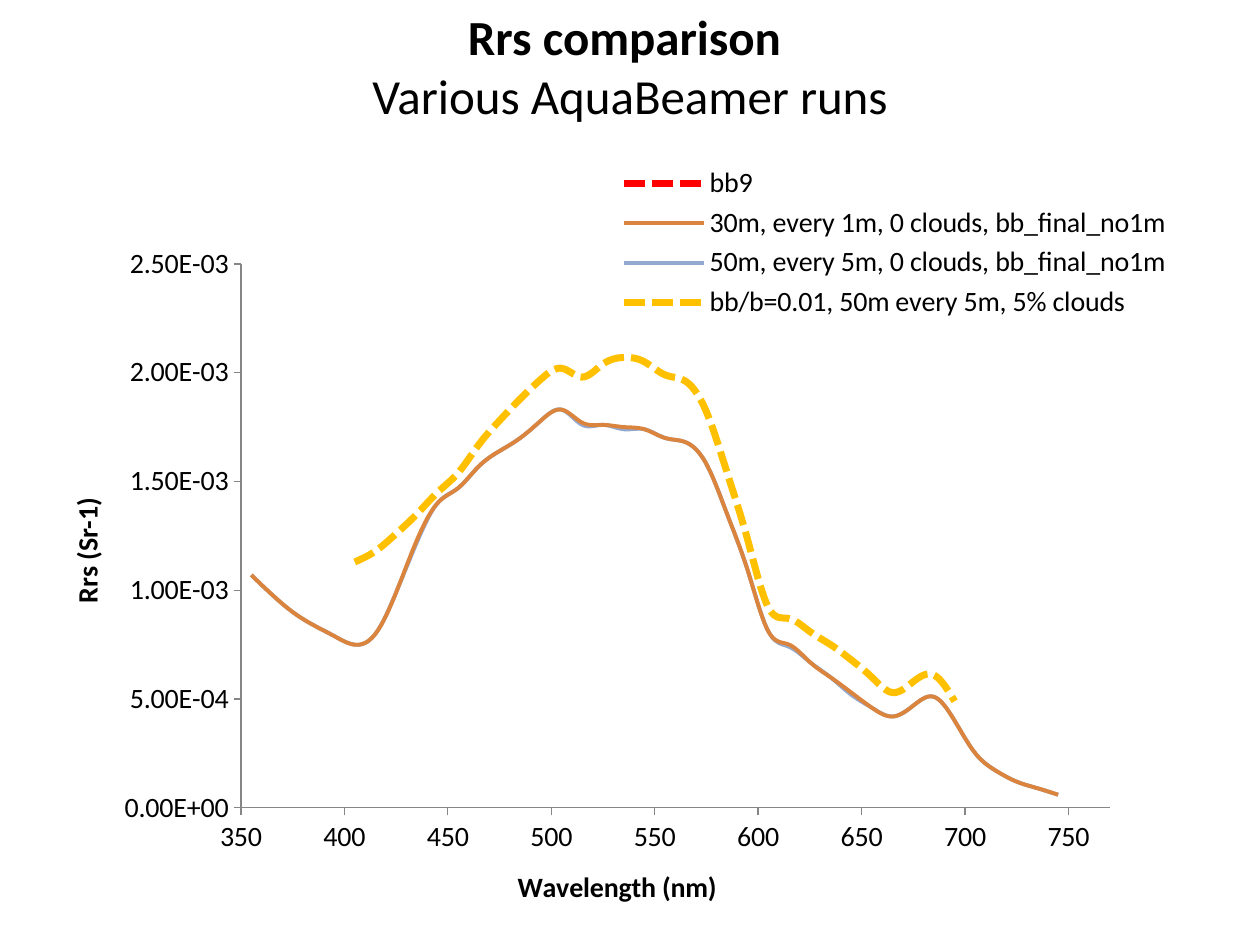
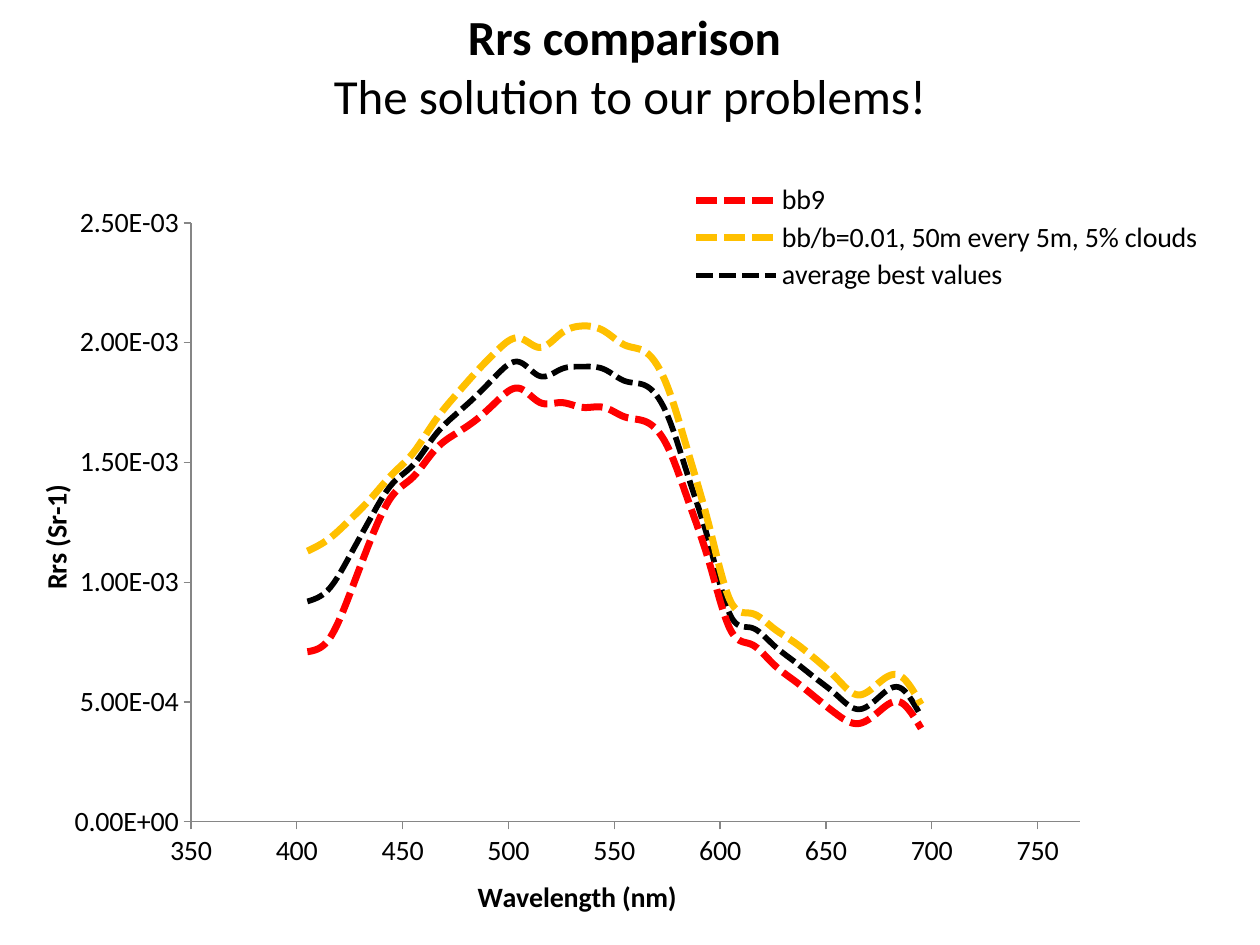
"""Build two slides that compare reflectance spectra in scatter charts."""
from lxml import etree
from pptx import Presentation
from pptx.chart.data import XyChartData
from pptx.dml.color import RGBColor
from pptx.enum.chart import XL_CHART_TYPE, XL_LEGEND_POSITION, XL_MARKER_STYLE, XL_TICK_MARK
from pptx.enum.dml import MSO_LINE
from pptx.enum.text import MSO_ANCHOR, MSO_AUTO_SIZE, PP_ALIGN
from pptx.oxml.ns import qn
from pptx.util import Emu, Pt

SMOOTH_LINES = XL_CHART_TYPE.XY_SCATTER_SMOOTH_NO_MARKERS
LEGEND_RIGHT = XL_LEGEND_POSITION.RIGHT
NO_MARKER = XL_MARKER_STYLE.NONE
TICK_OUT, TICK_NONE = XL_TICK_MARK.OUTSIDE, XL_TICK_MARK.NONE
DASHED = MSO_LINE.SQUARE_DOT
TOP, CENTER, FIXED = MSO_ANCHOR.TOP, PP_ALIGN.CENTER, MSO_AUTO_SIZE.NONE

FONT, BLACK, AXIS_GREY = "Calibri", "000000", "868686"
SLIDE_SIZE = (1260, 945)
TITLE_BOX = (0, 0, 1260, 131)
TITLE_ONLY = 5
WAVELENGTH_STEP = 10

# unit of every reading: 0.00001 per steradian
RUNS = {
    "bb9": dict(
        start=405, color="FF0000", width=4, dash=DASHED,
        readings=[71, 76, 95, 118, 136, 144, 155, 162, 168, 176, 181, 175, 175, 173, 173,
                  169, 167, 157, 134, 108, 80, 74, 66, 59, 52, 45, 41, 46, 50, 39]),
    "30m, every 1m, 0 clouds, bb_final_no1m": dict(
        start=355, color="DB843D", width=2.25, dash=None,
        readings=[107, 98, 90, 84, 79, 75, 80, 99, 123, 140, 147, 157, 164, 170, 178, 183,
                  177, 176, 175, 174, 170, 168, 158, 135, 109, 81, 75, 67, 60, 53, 46, 42,
                  47, 51, 40, 25, 17, 12, 9, 6]),
    "50m, every 5m, 0 clouds, bb_final_no1m": dict(
        start=355, color="93A9CF", width=2.25, dash=None,
        readings=[107, 98, 90, 84, 79, 75, 80, 99, 122, 140, 147, 157, 164, 170, 178, 183,
                  176, 176, 174, 174, 170, 168, 158, 135, 109, 81, 74, 67, 60, 52, 46, 42,
                  47, 51, 40, 25, 17, 12, 9, 6]),
    "bb/b=0.01, 50m every 5m, 5% clouds": dict(
        start=405, color="FFC000", width=4, dash=DASHED,
        readings=[113, 118, 126, 135, 145, 154, 167, 178, 188, 197, 202, 198, 204, 207, 205,
                  199, 196, 182, 154, 123, 92, 87, 81, 75, 68, 60, 53, 58, 61, 49]),
    "average best values": dict(
        start=405, color=BLACK, width=3.25, dash=DASHED,
        readings=[92, 97, 111, 127, 141, 149, 161, 170, 178, 187, 192, 186, 189, 190, 189,
                  184, 182, 170, 144, 116, 86, 81, 74, 67, 60, 53, 47, 52, 56, 44]),
}
BB9, RUN_30M, RUN_50M, RATIO, AVERAGE = RUNS

SLIDES = [
    dict(heading="Rrs comparison ", subtitle="Various AquaBeamer runs",
         runs=[BB9, RUN_30M, RUN_50M, RATIO],
         frame=(63, 158, 1140, 756), plot=(241, 264, 869, 544),
         legend=(615, 161, 560, 164)),
    dict(heading="Rrs comparison ", subtitle="The solution to our problems!",
         runs=[BB9, RATIO, AVERAGE],
         frame=(32, 136, 1197, 788), plot=(191, 223, 889, 599),
         legend=(687, 180, 520, 116)),
]
WAVELENGTH_AXIS = dict(minimum_scale=350, maximum_scale=770, major_unit=50)
RRS_AXIS = dict(minimum_scale=0, maximum_scale=0.0025, major_unit=0.0005)
AXIS_STYLE = dict(has_major_gridlines=False, has_minor_gridlines=False,
                  major_tick_mark=TICK_OUT, minor_tick_mark=TICK_NONE)


def px(length):
    """Turn pixels into EMU."""
    return Emu(round(length * 914400 / 126))


def rgb(code):
    """Turn a hex string into a colour."""
    return RGBColor.from_string(code)


def apply(target, values):
    """Set each named attribute on the target."""
    for name, value in values.items():
        setattr(target, name, value)


def style_font(font, size, bold=False):
    """Give a font the shared face and colour."""
    apply(font, dict(name=FONT, size=Pt(size), bold=bold))
    font.color.rgb = rgb(BLACK)


def layout_xml(box, frame, inner=False):
    """Describe a pixel box as fractions of the chart frame."""
    left, top, width, height = box
    frame_left, frame_top, frame_width, frame_height = frame
    layout = etree.Element(qn("c:layout"))
    manual = etree.SubElement(layout, qn("c:manualLayout"))
    settings = [("layoutTarget", "inner")] if inner else []
    settings += [("xMode", "edge"), ("yMode", "edge"),
                 ("x", (left - frame_left) / frame_width),
                 ("y", (top - frame_top) / frame_height),
                 ("w", width / frame_width), ("h", height / frame_height)]
    for tag, value in settings:
        etree.SubElement(manual, qn(f"c:{tag}")).set("val", str(value))
    return layout


def add_heading(slide, heading, subtitle):
    """Fill the title placeholder with a bold line and a plain line."""
    title = slide.shapes.title
    apply(title, dict(zip(("left", "top", "width", "height"), map(px, TITLE_BOX))))
    frame = title.text_frame
    apply(frame, dict(text=f"{heading}\n{subtitle}", word_wrap=True,
                      auto_size=FIXED, vertical_anchor=TOP))
    for paragraph, bold in zip(frame.paragraphs, (True, False)):
        paragraph.alignment = CENTER
        style_font(paragraph.runs[0].font, 28, bold)


def style_axis(axis, caption, scale, number_format):
    """Set the scale, ticks, labels and caption of an axis."""
    apply(axis, {**AXIS_STYLE, **scale})
    apply(axis.tick_labels, dict(number_format=number_format, number_format_is_linked=False))
    style_font(axis.tick_labels.font, 16)
    axis.format.line.color.rgb = rgb(AXIS_GREY)
    axis.format.line.width = Pt(0.75)
    axis.axis_title.text_frame.text = caption
    style_font(axis.axis_title.text_frame.paragraphs[0].runs[0].font, 16, True)


def style_run(series):
    """Draw one run as a smooth line in its own colour."""
    run = RUNS[series.name]
    apply(series.format.line, dict(width=Pt(run["width"]), dash_style=run["dash"]))
    series.format.line.color.rgb = rgb(run["color"])
    series.marker.style = NO_MARKER
    series._element.get_or_add_smooth().val = True


def add_spectra(slide, runs, frame, plot, legend):
    """Chart the runs against wavelength."""
    spectra = XyChartData()
    for name in runs:
        points = spectra.add_series(name)
        for step, reading in enumerate(RUNS[name]["readings"]):
            points.add_data_point(RUNS[name]["start"] + step * WAVELENGTH_STEP,
                                  round(reading / 100000, 5))
    chart = slide.shapes.add_chart(SMOOTH_LINES, *map(px, frame), spectra).chart
    style_font(chart.font, 10)
    apply(chart, dict(has_title=False, has_legend=True))
    chart.plots[0].vary_by_categories = False
    for series in chart.plots[0].series:
        style_run(series)
    style_axis(chart.category_axis, "Wavelength (nm)", WAVELENGTH_AXIS, "General")
    style_axis(chart.value_axis, "Rrs (Sr-1)", RRS_AXIS, "0.00E+00")

    area = chart._chartSpace.find(f".//{qn('c:plotArea')}")
    for automatic in area.findall(qn("c:layout")):
        area.remove(automatic)
    area.insert(0, layout_xml(plot, frame, inner=True))
    apply(chart.legend, dict(position=LEGEND_RIGHT, include_in_layout=False))
    style_font(chart.legend.font, 16)
    key = chart.legend._element
    for automatic in key.findall(qn("c:layout")):
        key.remove(automatic)
    key.find(qn("c:legendPos")).addnext(layout_xml(legend, frame))


def main():
    """Build and save the presentation."""
    presentation = Presentation()
    presentation.slide_width, presentation.slide_height = map(px, SLIDE_SIZE)
    for content in SLIDES:
        slide = presentation.slides.add_slide(presentation.slide_layouts[TITLE_ONLY])
        chart_parts = dict(content)
        add_heading(slide, chart_parts.pop("heading"), chart_parts.pop("subtitle"))
        add_spectra(slide, **chart_parts)
    presentation.save("out.pptx")


if __name__ == "__main__":
    main()
